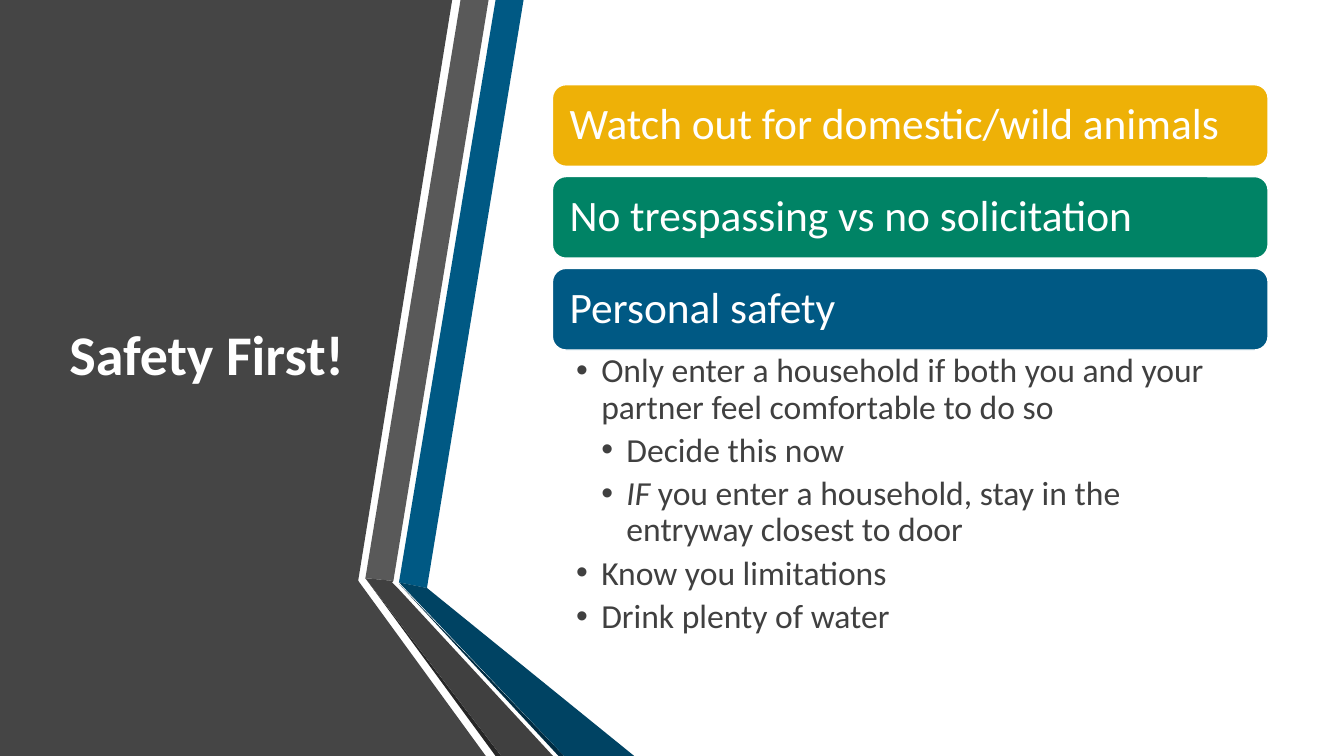
from dataclasses import dataclass

from lxml import etree
from pptx import Presentation
from pptx.dml.color import RGBColor
from pptx.enum.shapes import MSO_SHAPE
from pptx.enum.text import MSO_ANCHOR, PP_ALIGN
from pptx.oxml.ns import qn
from pptx.util import Pt

ROUNDED = MSO_SHAPE.ROUNDED_RECTANGLE
MIDDLE = MSO_ANCHOR.MIDDLE
TOP = MSO_ANCHOR.TOP
LEFT = PP_ALIGN.LEFT


@dataclass(frozen=True)
class Theme:
    font: str = "Calibri"
    title_size: int = 40
    card_size: int = 31
    body_size: int = 24
    white: str = "FFFFFF"
    panel: str = "454545"
    grey: str = "595959"
    dark_grey: str = "404040"
    grey_edge: str = "262626"
    blue: str = "005984"
    dark_blue: str = "004363"
    blue_edge: str = "002C42"
    yellow: str = "EEB107"
    green: str = "008365"


theme = Theme()


def set_frame(shape, anchor, side, vertical):
    frame = shape.text_frame
    frame.word_wrap = True
    frame.vertical_anchor = anchor
    frame.margin_left = frame.margin_right = Pt(side)
    frame.margin_top = frame.margin_bottom = Pt(vertical)
    return frame


def add_run(para, text, size, color, bold=False, italic=False):
    para.alignment = LEFT
    para.line_spacing = 0.9
    span = para.add_run()
    span.text = text
    span.font.name = theme.font
    span.font.size = Pt(size)
    span.font.bold = bold
    span.font.italic = italic
    span.font.color.rgb = RGBColor.from_string(color)


deck = Presentation()
deck.slide_width = Pt(960)
deck.slide_height = Pt(540)
page = deck.slides.add_slide(deck.slide_layouts[6])

# Left panel and folded ribbons, from back to front
outlines = [
    (theme.panel, [(0, 0), (323.3, 0), (256.3, 414), (256.3, 414.7), (347, 540), (0, 540)]),
    (theme.blue, [(285.1, 416.2), (304.6, 419.8), (373.7, 0), (353.5, 0)]),
    (theme.grey, [(349.2, 0), (329, 0), (261.4, 412.6), (280.8, 415.4)]),
    (theme.grey_edge, [(261.4, 412.6), (353.5, 540), (357.8, 540)]),
    (theme.blue_edge, [(285.1, 416.9), (398.9, 540), (403.2, 540)]),
    (theme.dark_blue, [(285.1, 416.2), (403.2, 540), (452.9, 540), (304.6, 419.8)]),
    (theme.dark_grey, [(394.6, 540), (284.4, 419.8), (280.1, 416.2), (280.8, 415.4),
                       (261.4, 412.6), (357.8, 540)]),
]
for color, points in outlines:
    builder = page.shapes.build_freeform(*points[0], scale=Pt(1))
    builder.add_line_segments(points[1:], close=True)
    outline = builder.convert_to_shape()
    outline.shadow.inherit = False
    outline.fill.solid()
    outline.fill.fore_color.rgb = RGBColor.from_string(color)
    outline.line.fill.background()

# Title
title = page.shapes.add_textbox(Pt(42.5), Pt(54), Pt(218.9), Pt(401.8))
frame = set_frame(title, MIDDLE, 7.2, 3.6)
add_run(frame.paragraphs[0], "Safety First!", theme.title_size, theme.white, bold=True)

# Heading cards
cards_left, cards_top, cards_width = 394.6, 60.5, 511.2
card_height, card_step = 58.3, 65.6
cards = [
    ("Watch out for domestic/wild animals", theme.yellow),
    ("No trespassing vs no solicitation", theme.green),
    ("Personal safety", theme.blue),
]
for index, (heading, color) in enumerate(cards):
    card = page.shapes.add_shape(ROUNDED, Pt(cards_left), Pt(cards_top + index * card_step),
                                 Pt(cards_width), Pt(card_height))
    card.shadow.inherit = False
    card.fill.solid()
    card.fill.fore_color.rgb = RGBColor.from_string(color)
    card.line.color.rgb = RGBColor.from_string(theme.white)
    card.line.width = Pt(1)
    frame = set_frame(card, MIDDLE, 9.4, 9.4)
    add_run(frame.paragraphs[0], heading, theme.card_size, theme.white)

# Bullets under the last card: level, then (text, italic) runs
bullets = [
    (1, [("Only enter a household if both you and your partner feel comfortable to do so", False)]),
    (2, [("Decide this now", False)]),
    (2, [("IF", True), (" you enter a household, stay in the entryway closest to door", False)]),
    (1, [("Know you limitations", False)]),
    (1, [("Drink plenty of water", False)]),
]
box = page.shapes.add_textbox(Pt(cards_left), Pt(249.8), Pt(cards_width), Pt(217.4))
frame = set_frame(box, TOP, 16.9, 2.9)
for index, (level, spans) in enumerate(bullets):
    para = frame.add_paragraph() if index else frame.paragraphs[0]
    para.level = level
    para.space_after = Pt(5)
    for text, italic in spans:
        add_run(para, text, theme.body_size, theme.dark_grey, italic=italic)
    properties = para._p.get_or_add_pPr()
    properties.set("marL", str(Pt(18 * level)))
    properties.set("indent", str(Pt(-18)))
    etree.SubElement(properties, qn("a:buFont"), typeface="Arial")
    etree.SubElement(properties, qn("a:buChar"), char="•")

deck.save("out.pptx")
